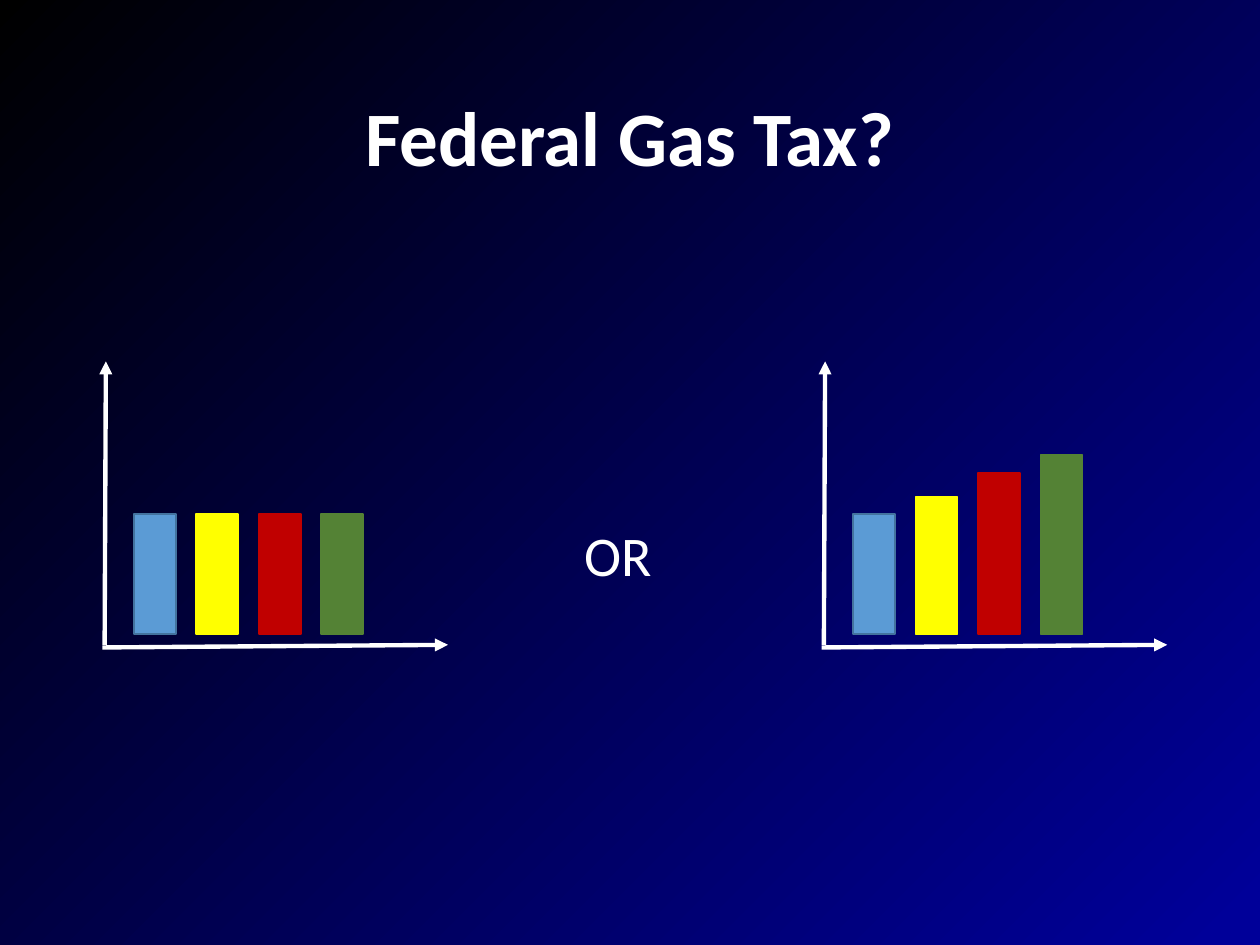
"""Build a slide asking which of two bar patterns describes the federal gas tax."""
from lxml import etree
from pptx import Presentation
from pptx.dml.color import RGBColor
from pptx.enum.shapes import MSO_CONNECTOR, MSO_SHAPE
from pptx.enum.text import MSO_ANCHOR, MSO_AUTO_SIZE, PP_ALIGN
from pptx.oxml.ns import qn
from pptx.util import Pt

STRAIGHT = MSO_CONNECTOR.STRAIGHT
RECTANGLE = MSO_SHAPE.RECTANGLE
MIDDLE = MSO_ANCHOR.MIDDLE
TOP = MSO_ANCHOR.TOP
CENTER = PP_ALIGN.CENTER
FIT_SHAPE = MSO_AUTO_SIZE.SHAPE_TO_FIT_TEXT

BLACK = RGBColor(0x00, 0x00, 0x00)
NAVY = RGBColor(0x00, 0x00, 0x99)
WHITE = RGBColor(0xFF, 0xFF, 0xFF)
BLUE = RGBColor(0x5B, 0x9B, 0xD5)
BLUE_EDGE = RGBColor(0x43, 0x73, 0x9E)
YELLOW = RGBColor(0xFF, 0xFF, 0x00)
RED = RGBColor(0xC0, 0x00, 0x00)
GREEN = RGBColor(0x54, 0x82, 0x35)

FONT = "Calibri"
QUESTION = "Federal Gas Tax?"
CHOICE = "OR"
BAR_COLORS = [(BLUE, BLUE_EDGE), (YELLOW, YELLOW), (RED, RED), (GREEN, GREEN)]
PATTERNS = [
    (58.5, [68.5, 68.5, 68.5, 68.5]),
    (469.5, [68.5, 78.5, 92, 102.5]),
]
AXES = [((1.3, 368.5), (2, 206.5)), ((0, 370), (197.5, 368.5))]
FIRST_BAR, BAR_PITCH, BAR_WIDTH, BAR_BASE = 18, 35.7, 24, 362.4


def write_text(frame, text, size, bold=False, anchor=TOP, line_spacing=1.0):
    frame.vertical_anchor = anchor
    paragraph = frame.paragraphs[0]
    paragraph.alignment = CENTER
    paragraph.line_spacing = line_spacing
    run = paragraph.add_run()
    run.text = text
    run.font.name = FONT
    run.font.size = Pt(size)
    run.font.bold = bold
    run.font.color.rgb = WHITE


def add_axis(shapes, left, start, end):
    (x1, y1), (x2, y2) = start, end
    axis = shapes.add_connector(
        STRAIGHT, Pt(left + x1), Pt(y1), Pt(left + x2), Pt(y2))
    axis.line.color.rgb = WHITE
    axis.line.width = Pt(2.5)
    etree.SubElement(axis.line._get_or_add_ln(), qn("a:tailEnd"), type="triangle")
    etree.SubElement(axis._element.spPr, qn("a:effectLst"))


def add_bar(shapes, left, height, fill, edge):
    bar = shapes.add_shape(
        RECTANGLE, Pt(left), Pt(BAR_BASE - height), Pt(BAR_WIDTH), Pt(height))
    bar.shadow.inherit = False
    bar.fill.solid()
    bar.fill.fore_color.rgb = fill
    bar.line.color.rgb = edge
    bar.line.width = Pt(1)


def add_pattern(slide, left, heights):
    shapes = slide.shapes.add_group_shape().shapes
    for start, end in AXES:
        add_axis(shapes, left, start, end)
    for i, (height, (fill, edge)) in enumerate(zip(heights, BAR_COLORS)):
        add_bar(shapes, left + FIRST_BAR + i * BAR_PITCH, height, fill, edge)


def paint_background(slide):
    fill = slide.background.fill
    fill.gradient()
    fill.gradient_angle = 315
    for stop, position, color in zip(fill.gradient_stops, (0, 0.98), (BLACK, NAVY)):
        stop.position = position
        stop.color.rgb = color


def main():
    deck = Presentation()
    deck.slide_width, deck.slide_height = Pt(720), Pt(540)
    slide = deck.slides.add_slide(deck.slide_layouts[5])
    paint_background(slide)

    title = slide.shapes.title
    title.left, title.top, title.width, title.height = Pt(49.5), Pt(28.75), Pt(621), Pt(104.4)
    write_text(title.text_frame, QUESTION, 44, bold=True, anchor=MIDDLE, line_spacing=0.9)

    for left, heights in PATTERNS:
        add_pattern(slide, left, heights)

    choice = slide.shapes.add_textbox(Pt(316), Pt(294), Pt(74), Pt(46))
    choice.text_frame.word_wrap = True
    choice.text_frame.auto_size = FIT_SHAPE
    write_text(choice.text_frame, CHOICE, 32)

    deck.save("out.pptx")


if __name__ == "__main__":
    main()
